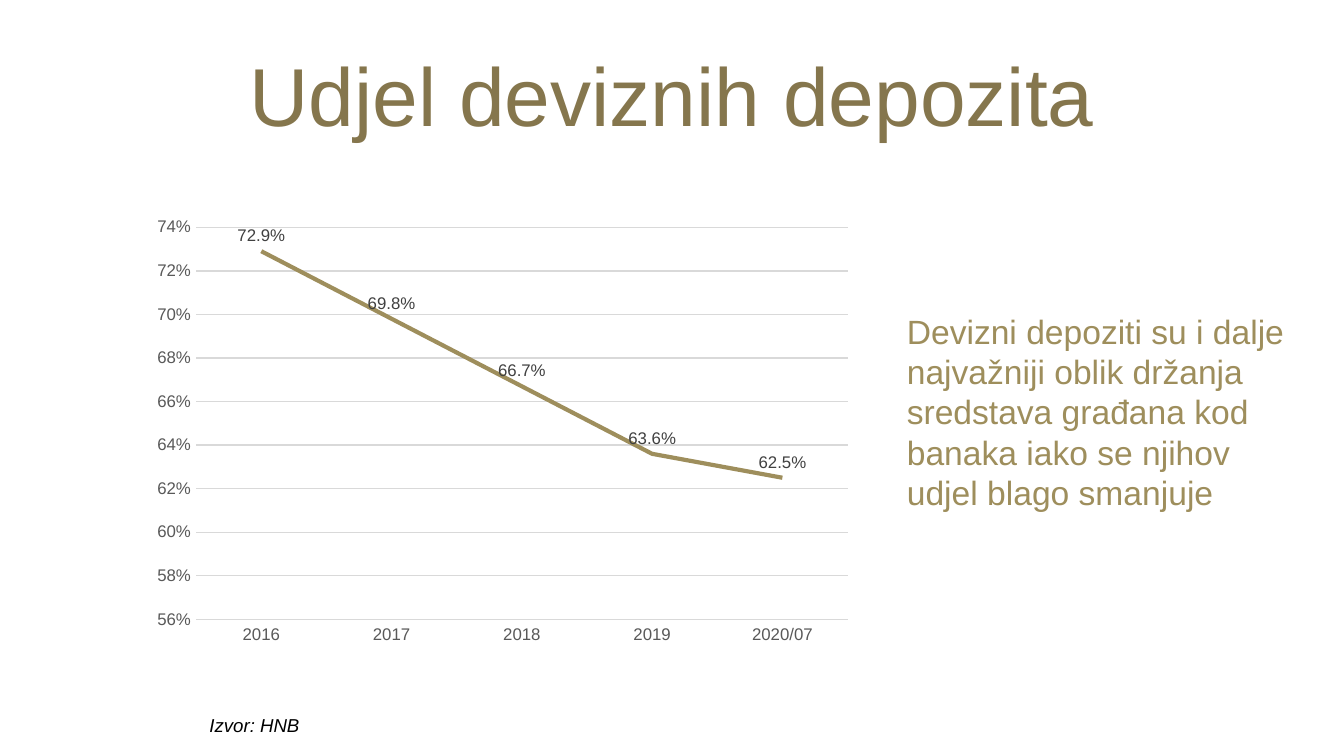
from pptx import Presentation
from pptx import util as u
from pptx.chart.data import CategoryChartData
from pptx.dml.color import RGBColor
from pptx.enum import chart as ch, text

GOLD = RGBColor(0x9E, 0x8E, 0x5C)
DARK_GOLD = RGBColor(0x85, 0x76, 0x4D)
BLACK = RGBColor(0, 0, 0)
LABEL_GREY = RGBColor(0x40, 0x40, 0x40)
AXIS_GREY = RGBColor(0x59, 0x59, 0x59)
GRID_GREY = RGBColor(0xD9, 0xD9, 0xD9)


def style_font(font, size, color, italic=False):
    values = {"name": "Arial", "size": u.Pt(size), "italic": italic, "bold": False}
    for name, value in values.items():
        setattr(font, name, value)
    font.color.rgb = color


def style_line(line, color, width):
    line.color.rgb = color
    line.width = u.Pt(width)


deck = Presentation()
deck.slide_width, deck.slide_height = u.Cm(25.4), u.Cm(14.28)
slide = deck.slides.add_slide(deck.slide_layouts[5])

heading = slide.shapes.title
place = {"left": 1.27, "top": 0.58, "width": 22.86, "height": 2.39}
for name, value in place.items():
    setattr(heading, name, u.Cm(value))
heading.text_frame.text = "Udjel deviznih depozita"
heading.text_frame.vertical_anchor = text.MSO_ANCHOR.MIDDLE
heading.text_frame.paragraphs[0].alignment = text.PP_ALIGN.CENTER
style_font(heading.text_frame.paragraphs[0].runs[0].font, 44, DARK_GOLD)

deposits = CategoryChartData(number_format="0.0%")
deposits.categories = ["2016", "2017", "2018", "2019", "2020/07"]
deposits.add_series("Series 1", [0.729, 0.698, 0.667, 0.636, 0.625])
share_chart = slide.shapes.add_chart(
    ch.XL_CHART_TYPE.LINE, u.Cm(2.7), u.Cm(3.94), u.Cm(13.59), u.Cm(8.4), deposits
).chart
share_chart.has_legend = False
share_chart.has_title = False
style_font(share_chart.font, 10, BLACK)

years, shares = share_chart.category_axis, share_chart.value_axis
for axis in (years, shares):
    axis.major_tick_mark = axis.minor_tick_mark = ch.XL_TICK_MARK.NONE
    style_font(axis.tick_labels.font, 9, AXIS_GREY)
style_line(years.format.line, GRID_GREY, 0.75)
scale = {"minimum_scale": 0.56, "maximum_scale": 0.74, "major_unit": 0.02,
         "has_major_gridlines": True}
for name, value in scale.items():
    setattr(shares, name, value)
shares.format.line.fill.background()
style_line(shares.major_gridlines.format.line, GRID_GREY, 0.75)
shares.tick_labels.number_format = "0%"
shares.tick_labels.number_format_is_linked = False

plot = share_chart.plots[0]
plot.vary_by_categories = False
trend = plot.series[0]
trend.smooth = False
trend.marker.style = ch.XL_MARKER_STYLE.NONE
style_line(trend.format.line, GOLD, 2.25)
labels = trend.data_labels
label_format = {"show_value": True, "number_format": "0.0%",
                "number_format_is_linked": False,
                "position": ch.XL_LABEL_POSITION.ABOVE}
for name, value in label_format.items():
    setattr(labels, name, value)
style_font(labels.font, 9, LABEL_GREY)

conclusion = ("Devizni depoziti su i dalje najvažniji oblik držanja sredstava "
              "građana kod banaka iako se njihov udjel blago smanjuje")
notes = [
    (conclusion, (16.89, 5.74, 8.03, 4.11), 18, GOLD, False, True),
    ("Izvor: HNB", (3.71, 13.36, 2.39, 0.69), 10, BLACK, True, False),
]
for wording, box, size, color, italic, wrap in notes:
    frame = slide.shapes.add_textbox(*map(u.Cm, box)).text_frame
    frame.word_wrap = wrap
    frame.auto_size = text.MSO_AUTO_SIZE.SHAPE_TO_FIT_TEXT
    frame.text = wording
    style_font(frame.paragraphs[0].runs[0].font, size, color, italic)

deck.save("out.pptx")
